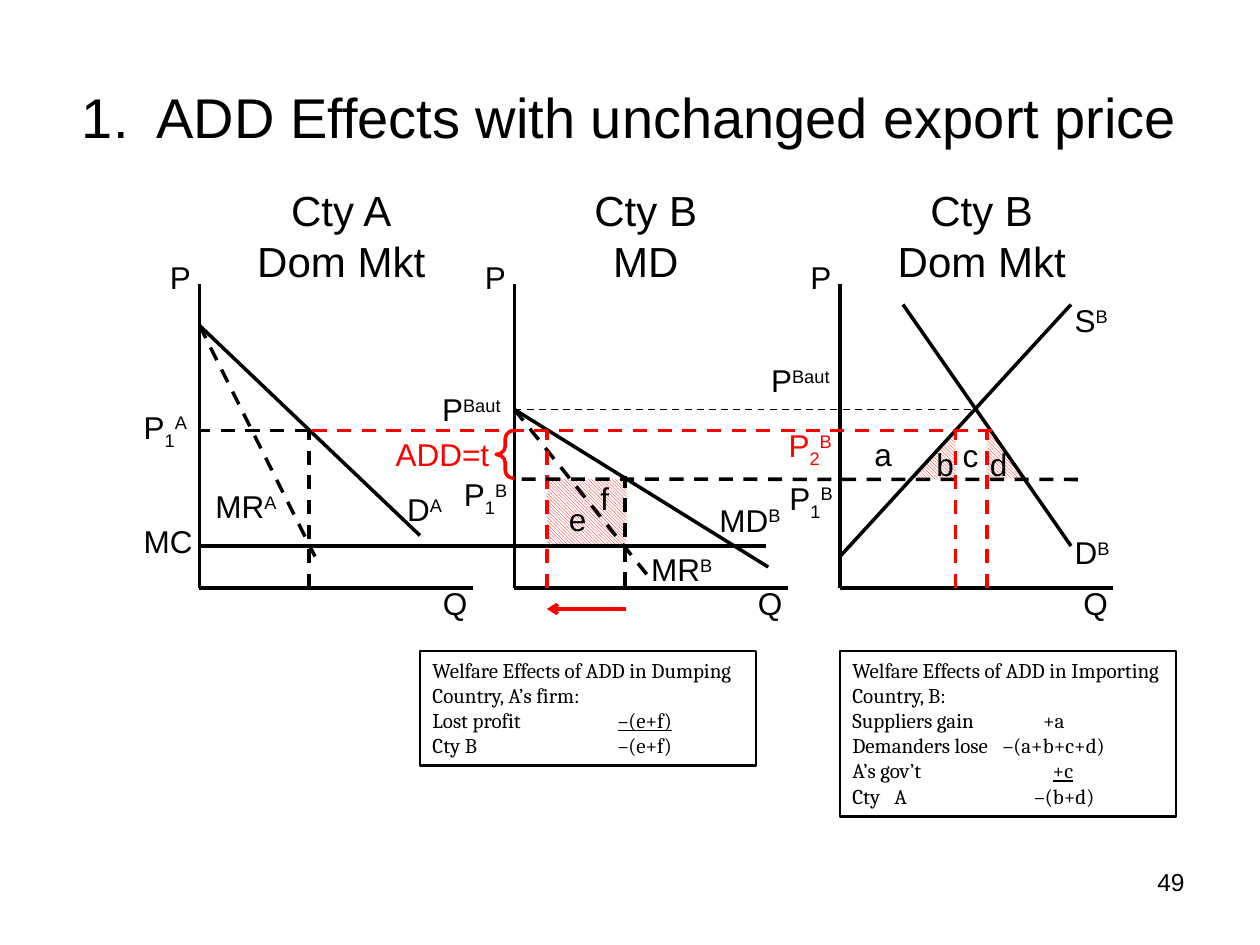
from dataclasses import dataclass
from typing import Any

from lxml.etree import SubElement
from pptx import Presentation
from pptx.dml.color import RGBColor
from pptx.enum.dml import MSO_LINE, MSO_PATTERN
from pptx.enum.shapes import MSO_CONNECTOR, MSO_SHAPE
from pptx.enum.text import MSO_ANCHOR, PP_ALIGN
from pptx.oxml.ns import qn
from pptx.util import Pt


def color(hex_code):
    return RGBColor.from_string(hex_code)


@dataclass
class Diagram:
    slide: Any
    font: str = "Arial"
    note_font: str = "Cambria"
    ink: str = "000000"
    accent: str = "FF0000"
    paper: str = "FFFFFF"
    edge: str = "E0F1F2"
    weight: float = 2

    def run(self, paragraph, content, size, ink=None, font=None, baseline=0, underline=False):
        piece = paragraph.add_run()
        piece.text = content
        piece.font.size = Pt(size)
        piece.font.name = font or self.font
        piece.font.color.rgb = color(ink or self.ink)
        if underline:
            piece.font.underline = True
        if baseline:
            piece._r.get_or_add_rPr().set("baseline", str(baseline))

    def frame(self, x, y, width, height):
        frame = self.slide.shapes.add_textbox(Pt(x), Pt(y), Pt(width), Pt(height)).text_frame
        frame.word_wrap = True
        return frame

    def text(self, x, y, width, height, rows, size, align=PP_ALIGN.CENTER, anchor=MSO_ANCHOR.TOP):
        frame = self.frame(x, y, width, height)
        frame.vertical_anchor = anchor
        for index, row in enumerate(rows):
            paragraph = frame.add_paragraph() if index else frame.paragraphs[0]
            paragraph.alignment = align
            self.run(paragraph, row, size)

    def label(self, x, y, base, sub="", sup="", ink=None, width=54):
        paragraph = self.frame(x, y, width, 29).paragraphs[0]
        for content, baseline in ((base, 0), (sub, -25000), (sup, 30000)):
            if content:
                self.run(paragraph, content, 18, ink, baseline=baseline)

    def line(self, start, end, ink=None, weight=None, dashed=False, arrow=False):
        line = self.slide.shapes.add_connector(
            MSO_CONNECTOR.STRAIGHT, *(Pt(value) for value in (*start, *end)))
        line.line.color.rgb = color(ink or self.ink)
        line.line.width = Pt(weight or self.weight)
        if dashed:
            line.line.dash_style = MSO_LINE.DASH
        if arrow:
            SubElement(line.line._get_or_add_ln(), qn("a:tailEnd"), type="arrow")
        SubElement(line._element.spPr, qn("a:effectLst"))

    def shape(self, preset, x, y, width, height, ink=None, weight=None):
        shape = self.slide.shapes.add_shape(preset, Pt(x), Pt(y), Pt(width), Pt(height))
        shape.shadow.inherit = False
        shape.fill.background()
        if ink:
            shape.line.color.rgb = color(ink)
            shape.line.width = Pt(weight or self.weight)
        else:
            shape.line.fill.background()
        return shape

    def hatch(self, preset, x, y, width, height, edge=None, mirrored=False):
        area = self.shape(preset, x, y, width, height, edge, 0.75)
        area.fill.patterned()
        area.fill.pattern = MSO_PATTERN.DARK_DOWNWARD_DIAGONAL
        area.fill.fore_color.rgb = color(self.accent)
        area.fill.back_color.rgb = color(self.paper)
        if mirrored:
            area._element.spPr.xfrm.set("flipH", "1")

    def brace(self, x, y, width, height):
        brace = self.shape(MSO_SHAPE.LEFT_BRACE, x, y, width, height, self.accent)
        brace.adjustments[0] = 0.44

    def note(self, x, y, width, height, rows):
        frame = self.shape(MSO_SHAPE.RECTANGLE, x, y, width, height, self.ink, 1.5).text_frame
        frame.word_wrap = True
        frame.vertical_anchor = MSO_ANCHOR.TOP
        for index, (stops, plain, underlined) in enumerate(rows):
            paragraph = frame.add_paragraph() if index else frame.paragraphs[0]
            paragraph.alignment = PP_ALIGN.LEFT
            if stops:
                tabs = SubElement(paragraph._p.get_or_add_pPr(), qn("a:tabLst"))
                for stop in stops:
                    SubElement(tabs, qn("a:tab"), pos=str(Pt(stop)), algn="l")
            self.run(paragraph, plain, 12, font=self.note_font)
            if underlined:
                self.run(paragraph, underlined, 12, font=self.note_font, underline=True)


def main():
    deck = Presentation()
    deck.slide_width, deck.slide_height = Pt(720), Pt(540)
    diagram = Diagram(deck.slides.add_slide(deck.slide_layouts[6]))
    red = diagram.accent

    home, imports, market = 114, 294, 480
    base, top = 336, 162
    cost, autarky, taxed, dumped = 312, 234, 246, 273.75
    sold_home, sold_before, sold_after = 176.5, 357, 312.5
    supplied, demanded = 546, 564

    diagram.hatch(MSO_SHAPE.RIGHT_TRIANGLE, demanded, 243.5, 21, 30, diagram.edge)
    diagram.hatch(MSO_SHAPE.RIGHT_TRIANGLE, 518.5, taxed, 27.5, 28, diagram.edge, True)
    diagram.hatch(MSO_SHAPE.RECTANGLE, sold_after, dumped, 45.5, cost - dumped)

    diagram.text(36, 21.6, 648, 90, ["1.  ADD Effects with unchanged export price"], 32,
                 anchor=MSO_ANCHOR.MIDDLE)
    diagram.text(516, 492, 168, 37, ["49"], 14, PP_ALIGN.RIGHT)

    for origin, offset, heading in ((home, 24, ["Cty A", "Dom Mkt"]),
                                    (imports, 18, ["Cty B", "MD"]),
                                    (market, 24, ["Cty B", "Dom Mkt"])):
        diagram.line((origin, base), (origin + 156, base))
        diagram.line((origin, base), (origin, top))
        diagram.label(origin + 132, 330, "Q")
        diagram.label(origin - 24, 144, "P")
        diagram.text(origin + offset, 102, 114, 66, heading, 24)

    for start, end in (((home, 186), (240, 306)),
                       ((516, 174), (612, 312)),
                       ((market, 318), (612, 174)),
                       ((imports, autarky), (439, 324)),
                       ((home, cost), (438, cost))):
        diagram.line(start, end)

    diagram.line((imports, autarky), (558, autarky), weight=1, dashed=True)
    for start, end, ink in (((imports, autarky), (371, 330), None),
                            ((home, 186), (180, 318), None),
                            ((sold_home, base), (sold_home, taxed), None),
                            ((sold_home, taxed), (home, taxed), None),
                            ((sold_after, base), (sold_after, taxed), red),
                            ((616, 274), (imports, dumped), None),
                            ((567, taxed), (sold_home, taxed), red),
                            ((sold_before, 335), (sold_before, 272), None),
                            ((supplied, base), (supplied, taxed), red),
                            ((demanded, base), (demanded, taxed), red)):
        diagram.line(start, end, ink, dashed=True)

    diagram.brace(283.5, taxed, 10.5, 27.5)
    diagram.line((358, 348), (sold_after, 348), red, arrow=True)

    for x, y, name, sub, sup in ((607, 168.5, "S", "", "B"), (607, 301, "D", "", "B"),
                                 (404, 282.5, "MD", "", "B"), (365, 311, "MR", "", "B"),
                                 (433.5, 203, "P", "", "Baut"), (245.5, 219.5, "P", "", "Baut"),
                                 (225.5, 276.5, "D", "", "A"), (116, 275, "MR", "", "A"),
                                 (75, 295, "MC", "", ""), (258, 268, "P", "1", "B"),
                                 (444, 270, "P", "1", "B"), (75, 229.5, "P", "1", "A"),
                                 (492.5, 245, "a", "", ""), (528, 250.5, "b", "", ""),
                                 (543, 245.5, "c", "", ""), (558.5, 250.5, "d", "", ""),
                                 (318, 282, "e", "", ""), (336, 270, "f", "", "")):
        diagram.label(x, y, name, sub, sup)
    diagram.label(219, 245, "ADD=t", ink=red, width=84)
    diagram.label(443.5, 240, "P", "2", "B", red)

    diagram.note(market, 372, 192, 94.5, [
        ((), "Welfare Effects of ADD in Importing Country, B:", ""),
        ((109,), "Suppliers gain\t+a", ""),
        ((86,), "Demanders lose\t–(a+b+c+d)", ""),
        ((91, 114.5), "A’s gov’t\t", "\t+c"),
        ((24, 104), "Cty\tA\t–(b+d)", "")])
    diagram.note(240, 372, 192, 65.5, [
        ((), "Welfare Effects of ADD in Dumping Country, A’s firm:", ""),
        ((99, 106, 140), "Lost profit\t", "\t–(e+f)\t"),
        ((106,), "Cty B\t–(e+f)", "")])

    deck.save("out.pptx")


if __name__ == "__main__":
    main()
